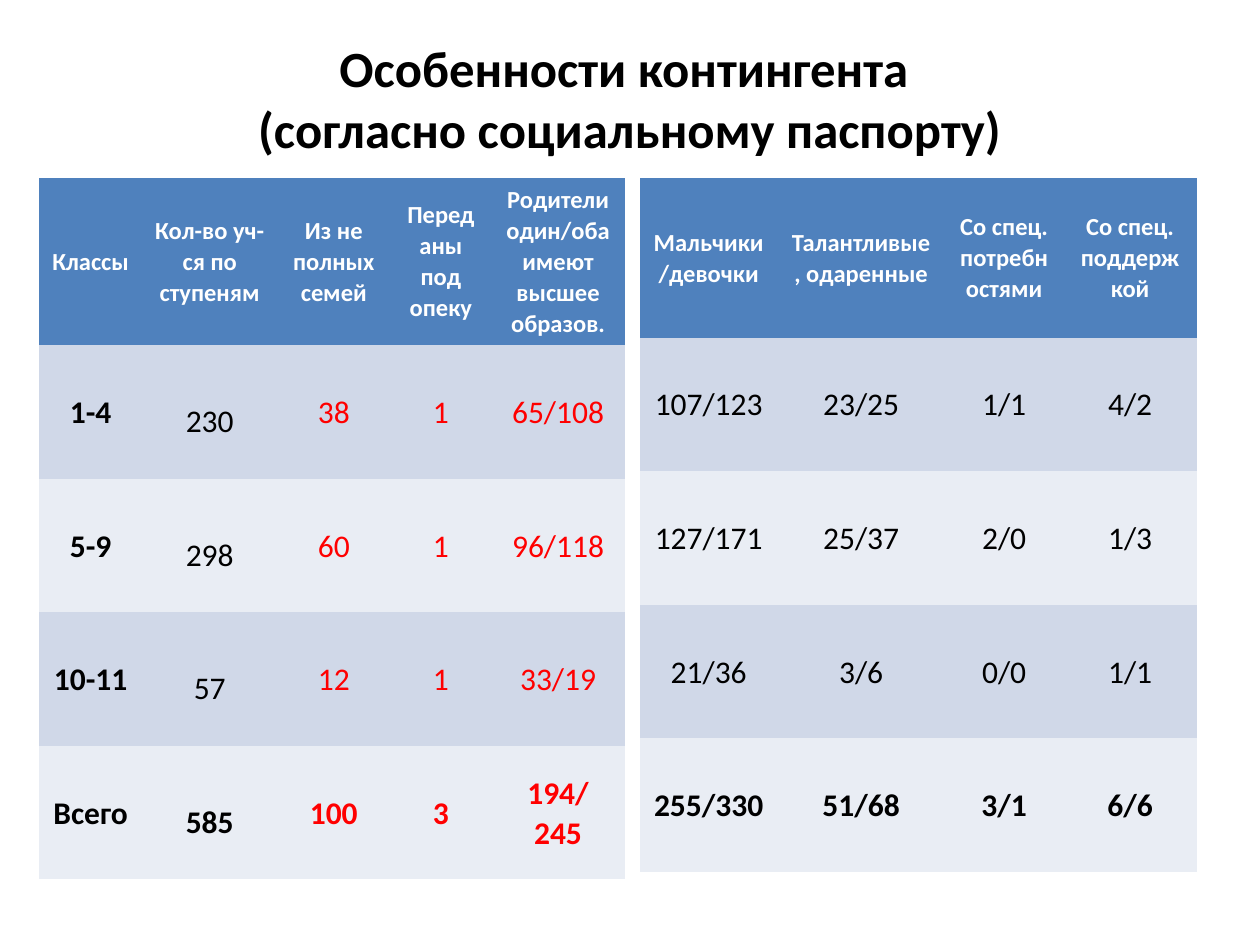
import pptx
import pptx.util
import pptx.dml.color
import pptx.enum.text
import pptx.oxml.ns

Inches = pptx.util.Inches
Pt = pptx.util.Pt
CENTER = pptx.enum.text.PP_ALIGN.CENTER
MIDDLE = pptx.enum.text.MSO_ANCHOR.MIDDLE
PLAIN = "{2D5ABB26-0587-4C30-8999-92F81FD0307C}"  # no style, no grid

HEAD, BANDS = "4F81BD", ("E9EDF4", "D0D8E8")
WHITE, BLACK, RED = "FFFFFF", "000000", "FF0000"
ROW = 1.06

FAMILY = [
    ["Классы", "Кол-во уч-ся по ступеням", "Из не полных семей",
     "Переданы под опеку", "Родители один/оба имеют высшее образов."],
    ["1-4", "230", "38", "1", "65/108"],
    ["5-9", "298", "60", "1", "96/118"],
    ["10-11", "57", "12", "1", "33/19"],
    ["Всего", "585", "100", "3", "194/ 245"],
]
PUPILS = [
    ["Мальчики/девочки", "Талантливые , одаренные",
     "Со спец. потребностями", "Со спец. поддержкой"],
    ["107/123", "23/25", "1/1", "4/2"],
    ["127/171", "25/37", "2/0", "1/3"],
    ["21/36", "3/6", "0/0", "1/1"],
    ["255/330", "51/68", "3/1", "6/6"],
]


def rgb(code):
    return pptx.dml.color.RGBColor.from_string(code)


def style(para, size, color, bold, space=None):
    para.alignment = CENTER
    para.line_spacing = space
    font = para.font
    font.name, font.size, font.bold = "Calibri", Pt(size), bold
    font.color.rgb = rgb(color)


def add_title(slide, left, top, width, height):
    title = slide.shapes.title
    title.left, title.top = Inches(left), Inches(top)
    title.width, title.height = Inches(width), Inches(height)
    frame = title.text_frame
    frame.text = "Особенности контингента \v(согласно социальному паспорту)"
    frame.vertical_anchor = MIDDLE
    style(frame.paragraphs[0], 29, BLACK, True)


def fill_cell(cell, text, fill, size, color, bold, loose):
    """Loose cells have wide line spacing and narrow margins."""
    cell.text = text
    cell.vertical_anchor = MIDDLE
    cell.fill.solid()
    cell.fill.fore_color.rgb = rgb(fill)
    cell.margin_left = cell.margin_right = Inches(0.07 if loose else 0.1)
    cell.margin_top = cell.margin_bottom = Inches(0 if loose else 0.05)
    style(cell.text_frame.paragraphs[0], size, color, bold,
          1.5 if loose else 1.04)


def add_grid(slide, left, top, data, widths, head, names=None, count=None, reds=()):
    """names is the bold column, count the loose one, reds the red ones."""
    last = len(data) - 1
    frame = slide.shapes.add_table(
        len(data), len(widths), Inches(left), Inches(top),
        Inches(sum(widths)), Inches(head + ROW * last))
    next(frame.element.iter(pptx.oxml.ns.qn("a:tableStyleId"))).text = PLAIN
    table = frame.table
    for col, width in zip(table.columns, widths):
        col.width = Inches(width)
    for r, texts in enumerate(data):
        table.rows[r].height = Inches(ROW if r else head)
        for c, text in enumerate(texts):
            cell = table.cell(r, c)
            if r == 0:
                fill_cell(cell, text, HEAD, 14, WHITE, True, False)
            else:
                fill_cell(cell, text, BANDS[r % 2], 18,
                          RED if c in reds else BLACK,
                          r == last or c == names, c == count)


def main():
    deck = pptx.Presentation()
    deck.slide_width, deck.slide_height = Inches(10), Inches(7.5)
    slide = deck.slides.add_slide(deck.slide_layouts.get_by_name("Title Only"))
    add_title(slide, 0.5, 0.24, 9, 1.07)
    add_grid(slide, 0.31, 1.41, FAMILY, (0.82, 1.07, 0.9, 0.8, 1.06), 1.32,
             names=0, count=1, reds=(2, 3, 4))
    add_grid(slide, 5.08, 1.41, PUPILS, (1.09, 1.33, 0.94, 1.06), 1.27)
    deck.save("out.pptx")


if __name__ == "__main__":
    main()
